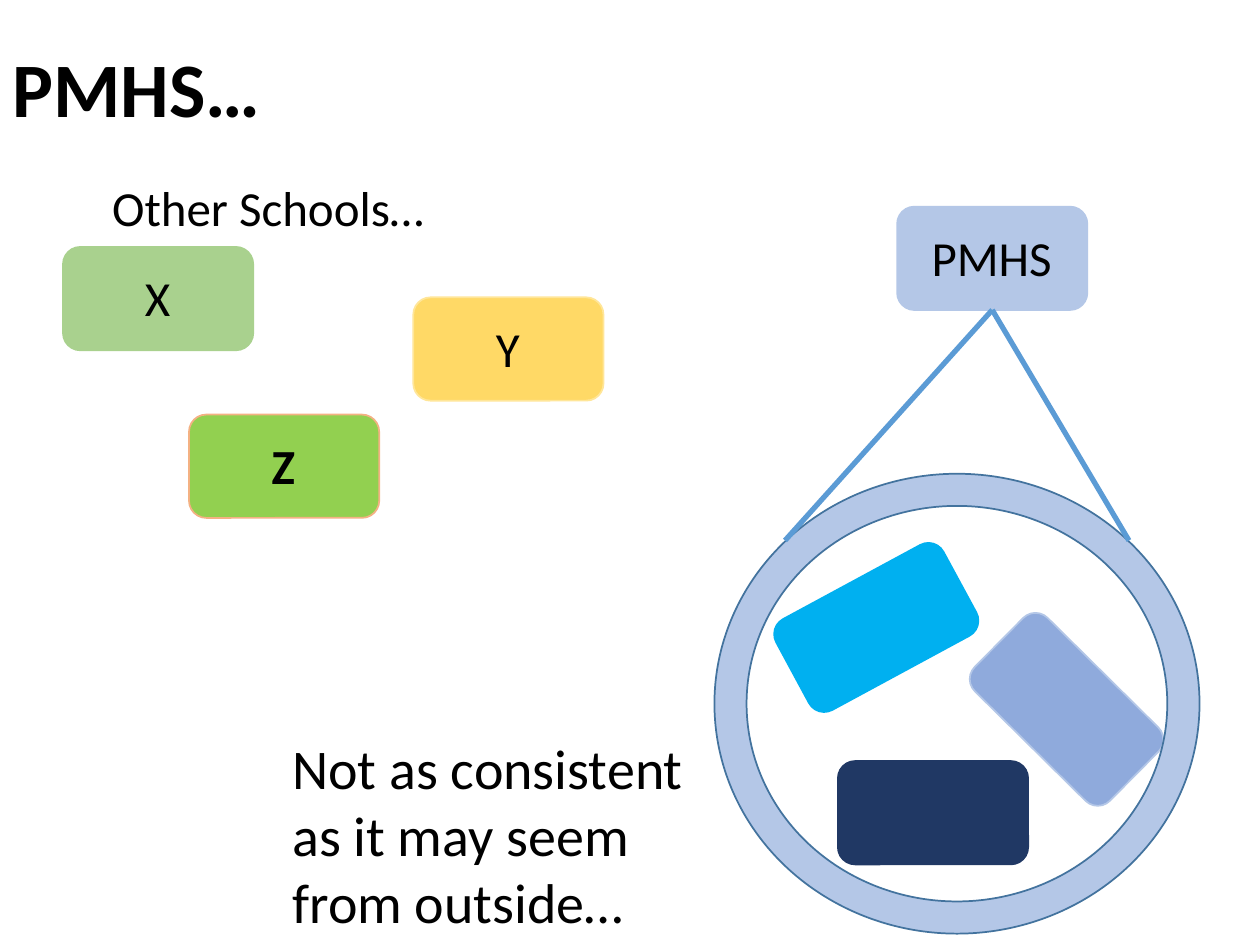
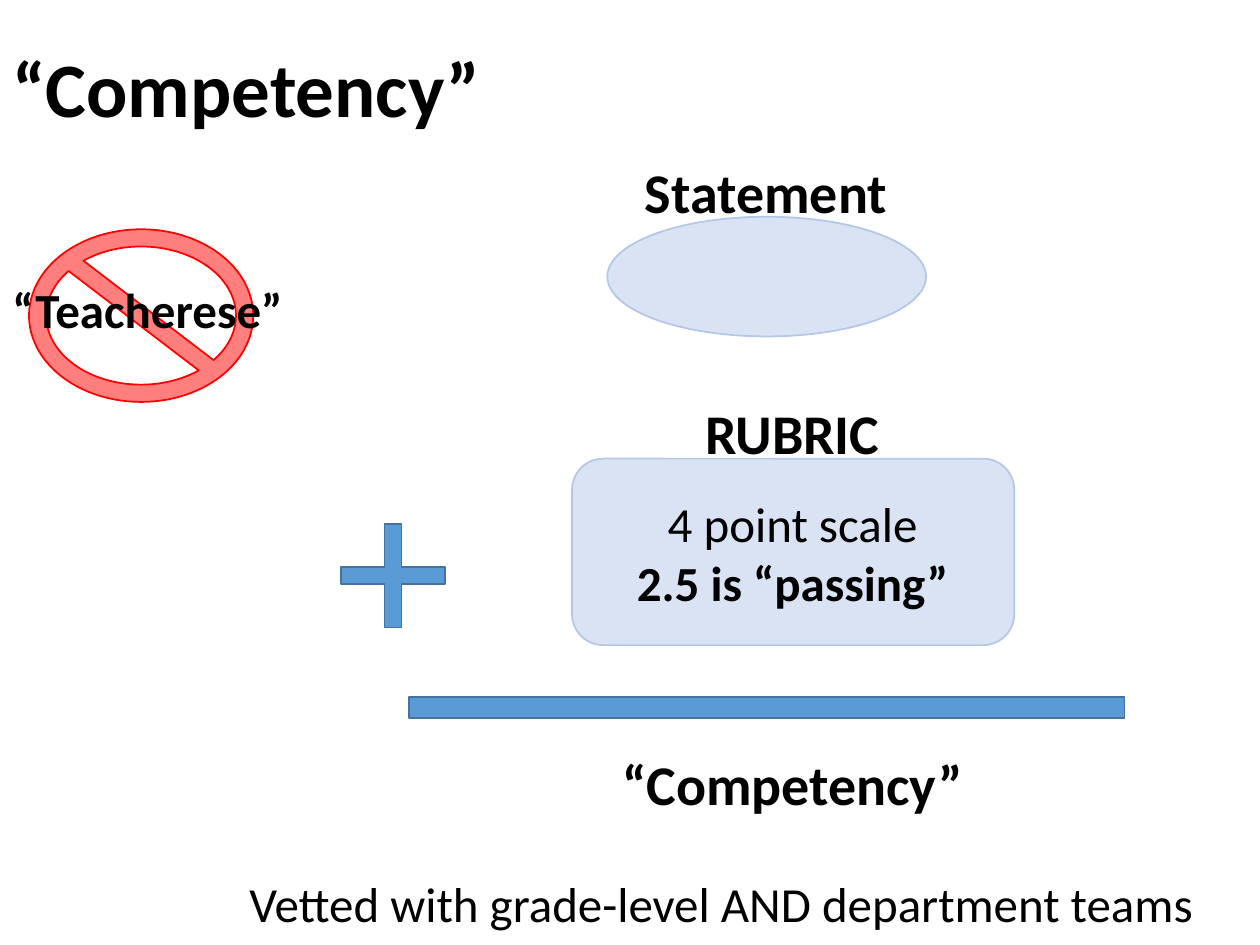
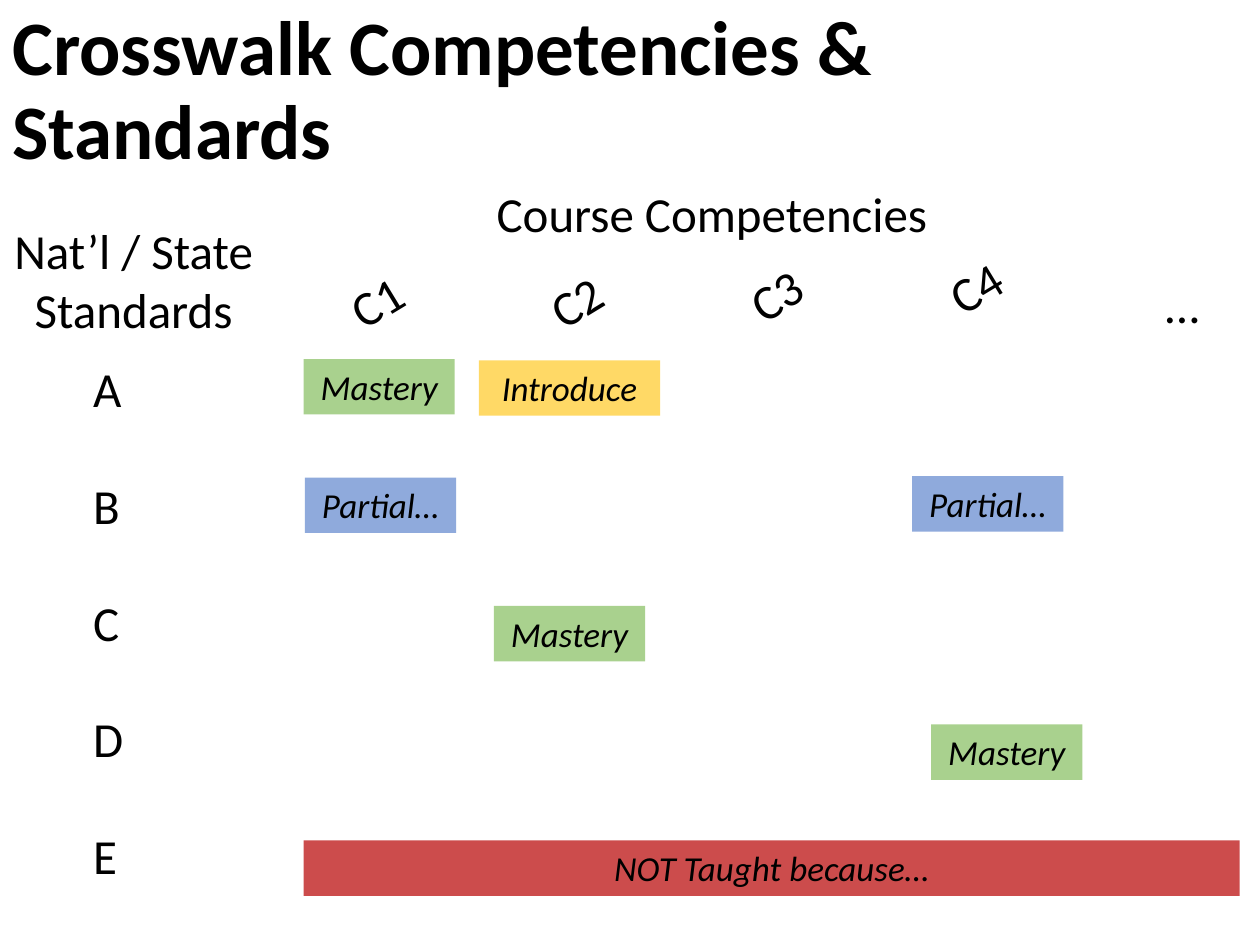
from dataclasses import dataclass
from typing import Any, NamedTuple, Optional

from lxml.etree import SubElement
from pptx import Presentation
from pptx.dml.color import RGBColor
from pptx.enum.shapes import MSO_CONNECTOR, MSO_SHAPE
from pptx.enum.text import MSO_ANCHOR, MSO_AUTO_SIZE, PP_ALIGN
from pptx.oxml.ns import qn
from pptx.util import Inches, Pt

WIDE, HIGH = Inches(10), Inches(7.5)
COLS, ROWS = 100, 75
FACE = "Calibri"
SLIM, FULL = (0.7, 0.4), (1, 0.5)

BLACK = RGBColor(0x00, 0x00, 0x00)
PALE = RGBColor(0xDA, 0xE3, 0xF3)
LIGHT = RGBColor(0xB4, 0xC7, 0xE7)
MID = RGBColor(0x8F, 0xAA, 0xDC)
BLUE = RGBColor(0x5B, 0x9B, 0xD5)
EDGE = RGBColor(0x43, 0x73, 0x9E)
NAVY = RGBColor(0x20, 0x38, 0x64)
SKY = RGBColor(0x00, 0xB0, 0xF0)
GREEN = RGBColor(0xA9, 0xD1, 0x8E)
LIME = RGBColor(0x92, 0xD0, 0x50)
GOLD = RGBColor(0xFF, 0xD9, 0x66)
CREAM = RGBColor(0xFF, 0xE6, 0x99)
PEACH = RGBColor(0xF4, 0xB1, 0x83)
RED = RGBColor(0xFF, 0x00, 0x00)
BRICK = RGBColor(0xCC, 0x4C, 0x4C)

ROUND = MSO_SHAPE.ROUNDED_RECTANGLE
MIDDLE = PP_ALIGN.CENTER


class Area(NamedTuple):
    col: float
    row: float
    wide: float
    high: float


@dataclass(frozen=True)
class Line:
    words: str
    size: float = 28
    bold: bool = False
    slant: bool = False
    align: Optional[PP_ALIGN] = None
    lead: Optional[float] = None
    gap: float = 0


@dataclass(frozen=True)
class Note:
    area: Area
    lines: tuple[Line, ...]
    pad: tuple[float, float] = SLIM
    turn: float = 0


@dataclass(frozen=True)
class Form:
    kind: MSO_SHAPE
    area: Area
    fill: RGBColor
    edge: Optional[RGBColor] = None
    turn: float = 0
    bend: Optional[float] = None


def across(col: float) -> int:
    return round(WIDE * col / COLS)


def down(row: float) -> int:
    return round(HIGH * row / ROWS)


def place(area: Area) -> tuple[int, int, int, int]:
    return across(area.col), down(area.row), across(area.wide), down(area.high)


def style(thing: Any, values: dict[str, Any]) -> None:
    for name, value in values.items():
        setattr(thing, name, value)


def write(shape: Any, lines: tuple[Line, ...], pad: tuple[float, float],
          fit: MSO_AUTO_SIZE = MSO_AUTO_SIZE.SHAPE_TO_FIT_TEXT,
          anchor: MSO_ANCHOR = MSO_ANCHOR.TOP) -> None:
    side, top = across(pad[0]), down(pad[1])
    frame = shape.text_frame
    style(frame, dict(word_wrap=True, auto_size=fit, vertical_anchor=anchor,
                      margin_left=side, margin_right=side,
                      margin_top=top, margin_bottom=top))
    for spot, line in enumerate(lines):
        para = frame.add_paragraph() if spot else frame.paragraphs[0]
        style(para, dict(alignment=line.align, line_spacing=line.lead,
                         space_before=Pt(line.gap if spot else 0)))
        run = para.add_run()
        run.text = line.words
        style(run.font, dict(name=FACE, size=Pt(line.size),
                             bold=line.bold, italic=line.slant))
        run.font.color.rgb = BLACK


def draw(slide: Any, form: Form) -> Any:
    shape = slide.shapes.add_shape(form.kind, *place(form.area))
    shape.shadow.inherit = False
    shape.rotation = form.turn
    shape.fill.solid()
    shape.fill.fore_color.rgb = form.fill
    if form.edge is None:
        shape.line.fill.background()
    else:
        shape.line.color.rgb = form.edge
        shape.line.width = Pt(1)
    if form.bend is not None:
        shape.adjustments[0] = form.bend
    return shape


def label(slide: Any, note: Note) -> None:
    box = slide.shapes.add_textbox(*place(note.area))
    box.rotation = note.turn
    write(box, note.lines, note.pad)


def head(slide: Any, words: str, wide: float = 86.2) -> None:
    box = slide.shapes.add_textbox(*place(Area(0, 0.1, wide, 14.5)))
    write(box, (Line(words, 44, bold=True, lead=0.9),), FULL,
          MSO_AUTO_SIZE.NONE, MSO_ANCHOR.MIDDLE)


def string(slide: Any, start: Any, col: float, row: float) -> None:
    link = slide.shapes.add_connector(MSO_CONNECTOR.STRAIGHT, 0, 0,
                                      across(col), down(row))
    link.begin_connect(start, 2)
    link.line.color.rgb = BLUE
    link.line.width = Pt(3)
    SubElement(link._element.spPr, qn("a:effectLst"))


def fade(shape: Any, share: int) -> None:
    color = shape._element.spPr.find(qn("a:solidFill"))[0]
    SubElement(color, qn("a:alpha")).set("val", str(share * 1000))


def card(col: float, row: float, fill: RGBColor, edge: RGBColor,
         turn: float = 0) -> Form:
    return Form(ROUND, Area(col, row, 15.1, 8.2), fill, edge, turn)


def schools(slide: Any) -> None:
    head(slide, "PMHS…")
    cards = {
        "PMHS": card(71.2, 16.4, LIGHT, LIGHT),
        "X": card(5, 19.6, GREEN, GREEN),
        "Y": card(32.8, 23.6, GOLD, CREAM),
        "Z": card(15, 32.9, LIME, PEACH),
    }
    drawn = {}
    for name, form in cards.items():
        drawn[name] = draw(slide, form)
        area = Area(form.area.col + 1.3, form.area.row + 1.25, 12.4, 5.5)
        label(slide, Note(area, (Line(name, bold=name == "Z", align=MIDDLE),)))
    for form in (
        card(62, 45.7, SKY, SKY, 331.6),
        card(77.1, 52.2, MID, LIGHT, 44.7),
        card(66.5, 60.4, NAVY, NAVY),
        Form(MSO_SHAPE.DONUT, Area(56.7, 37.6, 38.5, 36.5), LIGHT, EDGE, bend=0.07),
    ):
        draw(slide, form)
    for col in (62.3, 89.6):
        string(slide, drawn["PMHS"], col, 42.9)
    label(slide, Note(Area(22.5, 57.8, 34.2, 16.9),
                      (Line("Not as consistent as it may seem from outside…", 32),)))
    label(slide, Note(Area(8.2, 13.7, 35.1, 5.5), (Line("Other Schools…"),)))


def skill(slide: Any) -> None:
    ban = draw(slide, Form(MSO_SHAPE.NO_SYMBOL, Area(2.3, 18.2, 17.8, 13.7),
                           RED, RED, bend=0.1))
    fade(ban, 50)
    head(slide, "“Competency”")
    for form in (
        Form(MSO_SHAPE.OVAL, Area(48.2, 17.2, 25.3, 9.5), PALE, LIGHT),
        Form(ROUND, Area(45.4, 36.4, 35.1, 14.8), PALE, LIGHT),
        Form(MSO_SHAPE.MATH_PLUS, Area(25.6, 40.1, 11.2, 11.2), BLUE, EDGE, bend=0.12),
        Form(MSO_SHAPE.MATH_MINUS, Area(22.2, 52.7, 77.3, 6.9), BLUE, EDGE),
    ):
        draw(slide, form)
    for words, col, row in (("Statement", 45.4, 12.1), ("RUBRIC", 47.5, 31.2),
                            ("“Competency”", 47.5, 59.1)):
        label(slide, Note(Area(col, row, 30.8, 6.1),
                          (Line(words, 32, bold=True, align=MIDDLE),)))
    for note in (
        Note(Area(47.5, 38.8, 30.8, 10.2),
             (Line("4 point scale", align=MIDDLE),
              Line("2.5 is “passing”", bold=True, align=MIDDLE))),
        Note(Area(0, 21.7, 25.6, 5.7), (Line("“Teacherese”", bold=True),), FULL),
        Note(Area(18.8, 68.8, 78.9, 5.7),
             (Line("Vetted with grade-level AND department teams"),), FULL),
    ):
        label(slide, note)


def crosswalk(slide: Any) -> None:
    head(slide, "Crosswalk Competencies & Standards", 95.6)
    notes = [
        Note(Area(0, 17, 21.2, 10.4),
             (Line("Nat’l / State Standards", align=MIDDLE),), FULL),
        Note(Area(36.2, 14.1, 40.6, 5.7),
             (Line("Course Competencies", align=MIDDLE),), FULL),
        Note(Area(6.4, 28, 8.5, 43.4),
             tuple(Line(mark, gap=33) for mark in "ABCDE"), FULL),
        Note(Area(91.5, 21.3, 8.5, 5.7), (Line("…"),), FULL),
    ]
    for spot, row in enumerate((20.4, 20.4, 19.9, 19.3)):
        notes.append(Note(Area(26.7 + 15.85 * spot, row, 8.5, 5.7),
                          (Line(f"C{spot + 1}"),), FULL, 328.7))
    for note in notes:
        label(slide, note)
    fills = {"Mastery": GREEN, "Introduce": GOLD, "Partial…": MID,
             "NOT Taught because…": BRICK}
    for words, col, row, wide in (
        ("Mastery", 24.1, 28.5, 12),
        ("Introduce", 38, 28.6, 14.4),
        ("NOT Taught because…", 24.1, 66.7, 74.3),
        ("Partial…", 72.4, 37.8, 12),
        ("Mastery", 39.2, 48.1, 12),
        ("Mastery", 73.9, 57.5, 12),
        ("Partial…", 24.2, 37.9, 12),
    ):
        tag = draw(slide, Form(MSO_SHAPE.RECTANGLE, Area(col, row, wide, 4.4),
                               fills[words]))
        write(tag, (Line(words, 20, slant=True, align=MIDDLE),), FULL)


def main() -> None:
    deck = Presentation()
    style(deck, dict(slide_width=WIDE, slide_height=HIGH))
    for build in (schools, skill, crosswalk):
        build(deck.slides.add_slide(deck.slide_layouts[6]))
    deck.save("out.pptx")


if __name__ == "__main__":
    main()
